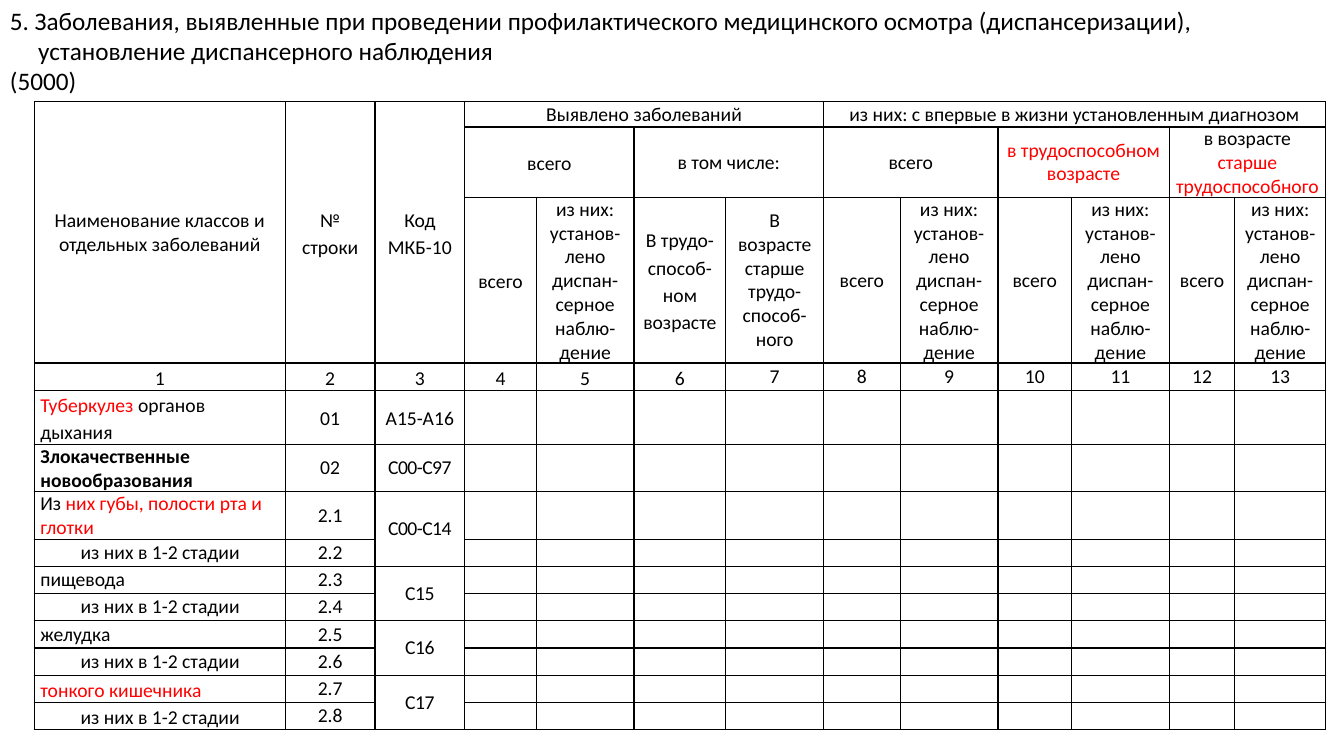
from lxml.etree import SubElement
from pptx import Presentation
from pptx.dml.color import RGBColor
from pptx.enum.text import MSO_ANCHOR, PP_ALIGN
from pptx.oxml.ns import qn
from pptx.util import Inches, Pt

BLACK = RGBColor(0, 0, 0)
RED = RGBColor(255, 0, 0)
FONT = "Calibri"
LOOSE = 1.15

# Text between asterisks is red; a line break starts a paragraph.
TITLE = [
    ("5. Заболевания, выявленные при проведении профилактического "
     "медицинского осмотра (диспансеризации),", 0),
    ("установление диспансерного наблюдения", 0.28),
    ("(5000)", 0),
]
COLS = [2.49, 0.89, 0.89, 0.71, 0.97, 0.91, 0.97,
        0.76, 0.97, 0.73, 0.97, 0.65, 0.9]
ROWS = [0.25, 0.69, 1.64, 0.27, 0.54, 0.47, 0.47] + [0.27] * 7

WATCH = "из них:\nустанов-лено диспан-серное наблю-дение"
# row, column, rows spanned, columns spanned, text, line spacing
HEAD = [
    (0, 0, 3, 1, "Наименование классов и отдельных заболеваний", 1),
    (0, 1, 3, 1, "№ строки", LOOSE),
    (0, 2, 3, 1, "Код МКБ-10", LOOSE),
    (0, 3, 1, 4, "Выявлено заболеваний", 1),
    (0, 7, 1, 6, "из них: с впервые в жизни установленным диагнозом", 1),
    (1, 3, 1, 2, "всего", LOOSE),
    (1, 5, 1, 2, "в том числе:", 1),
    (1, 7, 1, 2, "всего", 1),
    (1, 9, 1, 2, "*в трудоспособном возрасте*", 1),
    (1, 11, 1, 2, "в возрасте *старше трудоспособного*", 1),
    (2, 3, 1, 1, "всего", LOOSE),
    (2, 4, 1, 1, WATCH, 1),
    (2, 5, 1, 1, "В трудо-способ-ном возрасте", LOOSE),
    (2, 6, 1, 1, "В возрасте старше трудо-способ-ного", 1),
] + [(2, c, 1, 1, text, 1) for pair in (7, 9, 11)
     for c, text in ((pair, "всего"), (pair + 1, WATCH))]

STAGE = "из них в 1-2 стадии"
# name, row number, code (None continues the code above)
BODY = [
    ("*Туберкулез* органов дыхания", "01", "А15-А16"),
    ("Злокачественные новообразования", "02", "C00-С97"),
    ("Из *них губы, полости рта и глотки*", "2.1", "С00-С14"),
    (STAGE, "2.2", None),
    ("пищевода", "2.3", "С15"),
    (STAGE, "2.4", None),
    ("желудка", "2.5", "С16"),
    (STAGE, "2.6", None),
    ("*тонкого кишечника*", "2.7", "С17"),
    (STAGE, "2.8", None),
]
START = 4
LOOSE_ROWS = (0, 8, 9)


def write(frame, text, size=14, align=PP_ALIGN.CENTER, space=1,
          bold=False, indent=0, track=0, first=True):
    for n, line in enumerate(text.split("\n")):
        para = frame.paragraphs[0] if first and n == 0 else frame.add_paragraph()
        para.alignment = align
        para.line_spacing = space
        if indent:
            para._p.get_or_add_pPr().set("marL", str(Inches(indent)))
        for k, part in enumerate(line.split("*")):
            if not part:
                continue
            run = para.add_run()
            run.text = part
            run.font.name = FONT
            run.font.size = Pt(size)
            run.font.bold = bold
            run.font.color.rgb = RED if k % 2 else BLACK
            if track:
                run._r.get_or_add_rPr().set("spc", str(track))


def frame_cell(cell):
    """Give a cell its margins, thin black borders and small empty line."""
    cell.margin_left = cell.margin_right = Inches(0.06)
    cell.margin_top = cell.margin_bottom = 0
    cell.vertical_anchor = MSO_ANCHOR.MIDDLE
    props = cell._tc.get_or_add_tcPr()
    for side in ("lnL", "lnR", "lnT", "lnB"):
        line = SubElement(props, qn("a:" + side), w=str(Pt(1)))
        fill = SubElement(line, qn("a:solidFill"))
        SubElement(fill, qn("a:srgbClr"), val=str(BLACK))
    cell.fill.background()
    if not cell.text_frame.text:
        para = cell.text_frame.paragraphs[0]
        SubElement(para._p, qn("a:endParaRPr"), sz="1400")


def fill_table(table):
    for r, c, down, across, text, space in HEAD:
        cell = table.cell(r, c)
        if down * across > 1:
            cell.merge(table.cell(r + down - 1, c + across - 1))
        write(cell.text_frame, text, space=space)
    for c in range(len(COLS)):
        write(table.cell(START - 1, c).text_frame, str(c + 1),
              space=LOOSE if c < 6 else 1)
    for n, (name, num, code) in enumerate(BODY):
        r = START + n
        write(table.cell(r, 0).text_frame, name, align=PP_ALIGN.LEFT,
              space=LOOSE if n in LOOSE_ROWS else 1, bold=num == "02",
              indent=0.4 if name == STAGE else 0)
        space = LOOSE if n == 0 else 1
        write(table.cell(r, 1).text_frame, num, space=space)
        if code:
            write(table.cell(r, 2).text_frame, code, space=space,
                  track=-40 if n else 0)
        else:
            table.cell(r - 1, 2).merge(table.cell(r, 2))


def main():
    deck = Presentation()
    deck.slide_width, deck.slide_height = Inches(13.33), Inches(7.5)
    slide = deck.slides.add_slide(deck.slide_layouts[6])

    box = slide.shapes.add_textbox(0, 0, Inches(13.22), Inches(1.01))
    box.text_frame.word_wrap = True
    for n, (line, indent) in enumerate(TITLE):
        write(box.text_frame, line, size=18, align=PP_ALIGN.LEFT,
              indent=indent, first=n == 0)

    table = slide.shapes.add_table(
        len(ROWS), len(COLS), Inches(0.34), Inches(1.01),
        Inches(sum(COLS)), Inches(sum(ROWS))).table
    table.first_row = table.horz_banding = False
    for col, width in zip(table.columns, COLS):
        col.width = Inches(width)
    for row, height in zip(table.rows, ROWS):
        row.height = Inches(height)
    fill_table(table)
    for cell in table.iter_cells():
        frame_cell(cell)
    deck.save("out.pptx")


if __name__ == "__main__":
    main()
